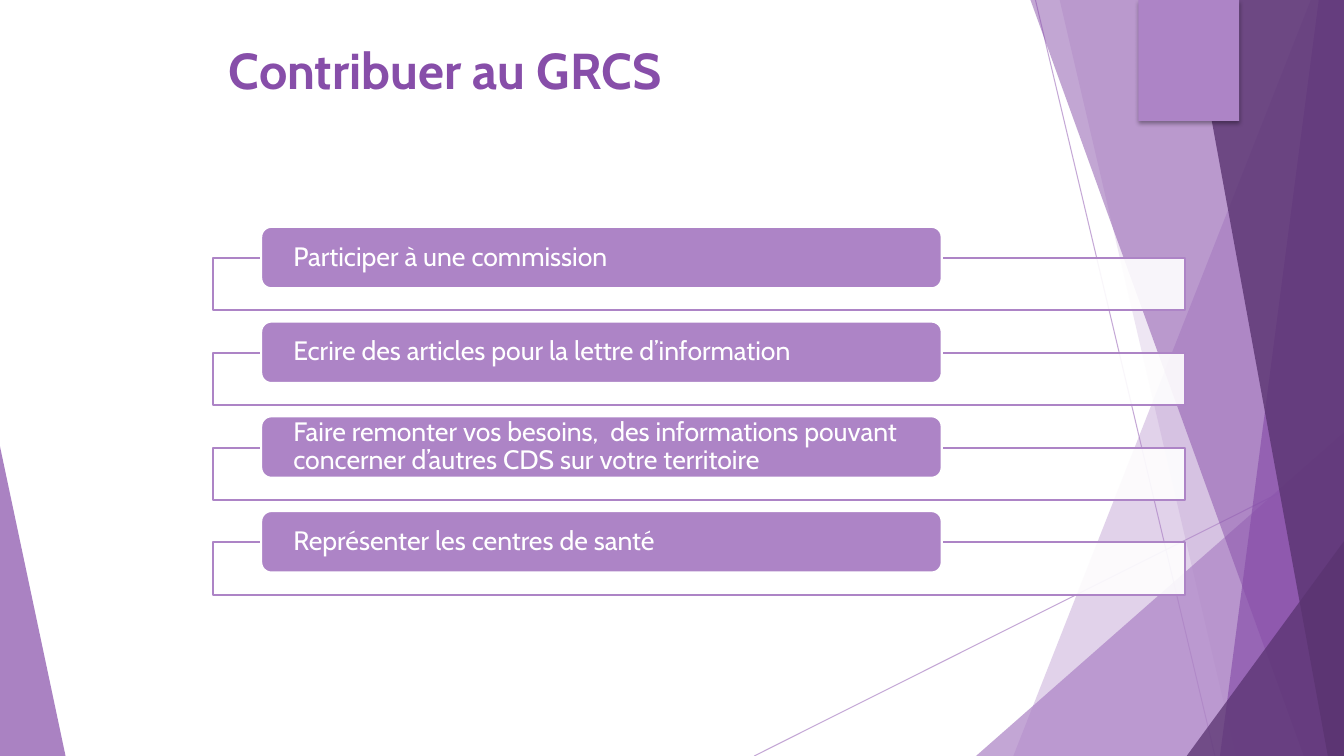
from lxml import etree
from pptx import Presentation
from pptx.dml.color import RGBColor
from pptx.enum.shapes import MSO_CONNECTOR, MSO_SHAPE
from pptx.enum.text import MSO_ANCHOR, MSO_AUTO_SIZE, PP_ALIGN
from pptx.oxml.ns import qn
from pptx.util import Inches, Pt

RECT, ROUNDED = MSO_SHAPE.RECTANGLE, MSO_SHAPE.ROUNDED_RECTANGLE
STRAIGHT = MSO_CONNECTOR.STRAIGHT
TOP, MIDDLE = MSO_ANCHOR.TOP, MSO_ANCHOR.MIDDLE
LEFT, NO_FIT = PP_ALIGN.LEFT, MSO_AUTO_SIZE.NONE

WIDTH, HEIGHT = 13.33, 7.5
LILAC, PURPLE, PLUM, WHITE = "AD84C6", "874EA9", "5A3471", "FFFFFF"


def rgb(color):
    return RGBColor.from_string(color)


class SlideBuilder:
    font = "Cabin"

    def __init__(self, slide):
        self.s = slide

    def fade(self, sp, percent):
        """Set the opacity of the first colour in the shape's properties."""
        clr = sp._element.spPr.find(".//" + qn("a:srgbClr"))
        etree.SubElement(clr, qn("a:alpha"), val=str(percent * 1000))

    def paint(self, sp, fill, opacity=100, line=None):
        sp.shadow.inherit = False
        sp.fill.solid()
        sp.fill.fore_color.rgb = rgb(fill)
        if opacity < 100:
            self.fade(sp, opacity)
        if line:
            sp.line.color.rgb = rgb(line)
            sp.line.width = Pt(1.5)
        else:
            sp.line.fill.background()

    def line(self, x1, y1, x2, y2):
        c = self.s.shapes.add_connector(
            STRAIGHT, Inches(x1), Inches(y1), Inches(x2), Inches(y2))
        c.line.color.rgb = rgb(LILAC)
        c.line.width = Pt(0.75)
        self.fade(c, 70)
        etree.SubElement(c._element.spPr, qn("a:effectLst"))

    def polygon(self, points, fill, opacity):
        corners = [(Inches(x), Inches(y)) for x, y in points]
        builder = self.s.shapes.build_freeform(*corners[0])
        builder.add_line_segments(corners[1:], close=True)
        self.paint(builder.convert_to_shape(), fill, opacity)

    def box(self, kind, x, y, w, h, fill, opacity=100, line=None):
        sp = self.s.shapes.add_shape(
            kind, Inches(x), Inches(y), Inches(w), Inches(h))
        self.paint(sp, fill, opacity, line)
        return sp

    def drop_shadow(self, sp):
        effects = sp._element.spPr.find(qn("a:effectLst"))
        shadow = etree.SubElement(
            effects, qn("a:outerShdw"), blurRad=str(Pt(3)), dist=str(Pt(2)),
            dir="5400000", rotWithShape="0")
        clr = etree.SubElement(shadow, qn("a:srgbClr"), val="000000")
        etree.SubElement(clr, qn("a:alpha"), val="35000")

    def text(self, sp, text, size, color, anchor, bold=False, inset=0.1, spacing=1.0):
        tf = sp.text_frame
        tf.word_wrap = True
        tf.auto_size = NO_FIT
        tf.vertical_anchor = anchor
        tf.margin_left = tf.margin_right = Inches(inset)
        p = tf.paragraphs[0]
        p.alignment = LEFT
        p.line_spacing = spacing
        r = p.add_run()
        r.text = text
        r.font.name = self.font
        r.font.size = Pt(size)
        r.font.bold = bold
        r.font.color.rgb = rgb(color)

    def title(self, text, x, y, w, h):
        sp = self.s.shapes.title
        sp.left, sp.top, sp.width, sp.height = (Inches(v) for v in (x, y, w, h))
        self.text(sp, text, 36, PURPLE, TOP, bold=True)

    def banner(self, text, y):
        """A pale frame with a rounded label over its top edge."""
        self.box(RECT, 2.11, y + 0.31, 9.64, 0.52, WHITE, 90, LILAC)
        label = self.box(ROUNDED, 2.59, y, 6.75, 0.61, LILAC, line=WHITE)
        label.text_frame.margin_top = label.text_frame.margin_bottom = 0
        self.text(label, text, 19, WHITE, MIDDLE, inset=0.29, spacing=0.9)


def main():
    prs = Presentation()
    prs.slide_width, prs.slide_height = Inches(WIDTH), Inches(HEIGHT)
    b = SlideBuilder(prs.slides.add_slide(prs.slide_layouts[5]))

    # Background facets
    b.line(7.48, HEIGHT, WIDTH, 4.57)
    b.line(10.27, 0, 12.05, HEIGHT)
    top_right, bottom_right = (WIDTH, 0), (WIDTH, HEIGHT)
    facets = [
        ([(13, 0), (10.05, HEIGHT), bottom_right, top_right], LILAC, 36),
        ([(10.51, 0), (12.26, HEIGHT), bottom_right, top_right], LILAC, 20),
        ([(9.68, HEIGHT), (WIDTH, 4.29), bottom_right], LILAC, 72),
        ([(10.22, 0), (12.93, HEIGHT), bottom_right, top_right], PURPLE, 50),
        ([(13.08, 0), (12.1, HEIGHT), bottom_right, top_right], PURPLE, 66),
        ([(11.8, 0), (13.17, HEIGHT), bottom_right, top_right], PLUM, 80),
        ([(11.77, HEIGHT), (WIDTH, 5.37), bottom_right], PLUM, 76),
        ([(0, 4.43), (0.65, HEIGHT), (0, HEIGHT)], PURPLE, 70),
    ]
    for points, fill, opacity in facets:
        b.polygon(points, fill, opacity)
    b.drop_shadow(b.box(RECT, 11.29, 0, 1, 1.2, LILAC))

    # Title
    b.title("Contribuer au GRCS", 2.17, 0.34, 7.76, 1.44)

    # Ways to contribute
    actions = [
        "Participer à une commission",
        "Ecrire des articles pour la lettre d’information",
        "Faire remonter vos besoins,  des informations pouvant "
        "concerner d’autres CDS sur votre territoire",
        "Représenter les centres de santé",
    ]
    first_top, pitch = 2.25, 0.94
    for i, action in enumerate(actions):
        b.banner(action, first_top + i * pitch)

    prs.save("out.pptx")


if __name__ == "__main__":
    main()
